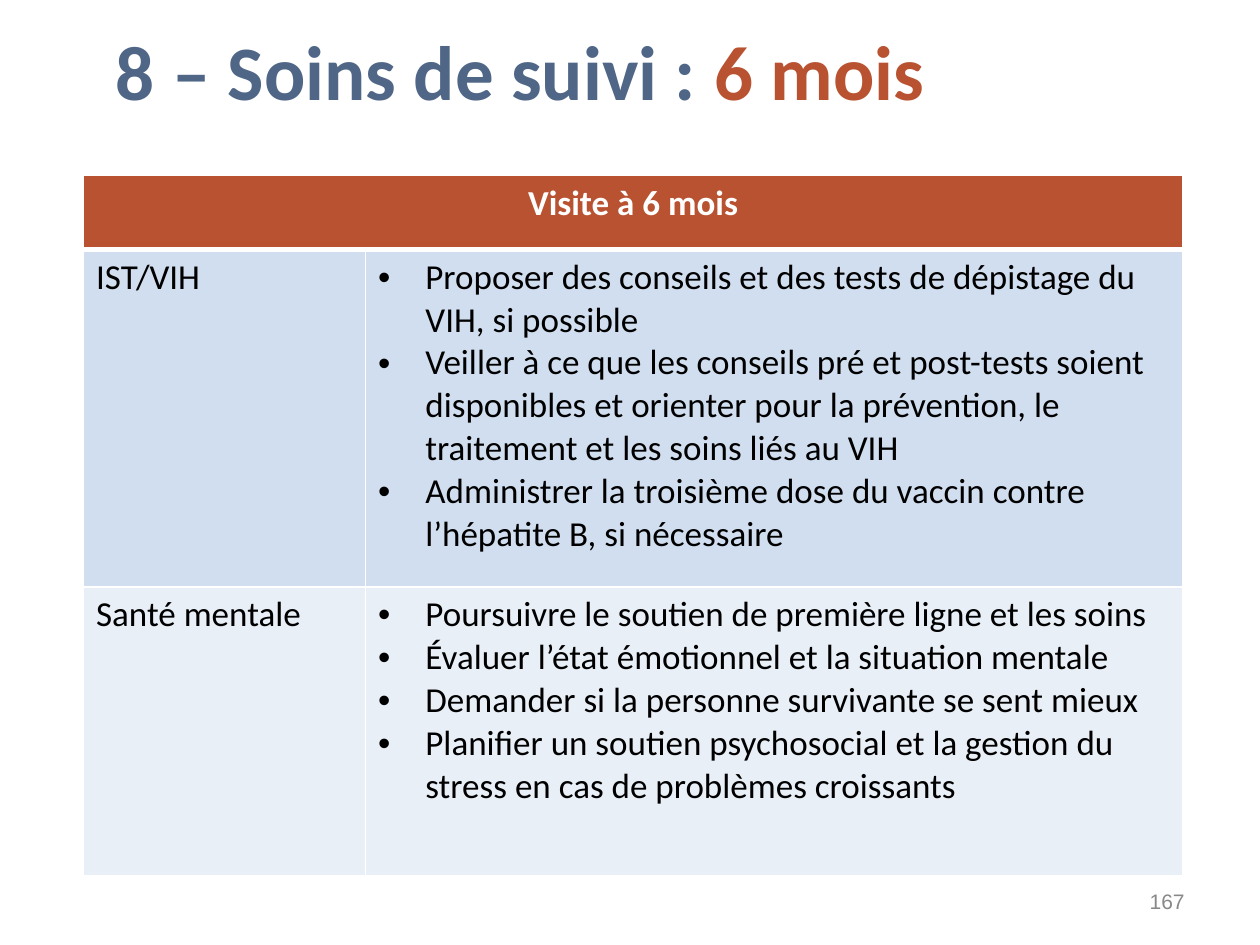
from lxml import etree
from pptx import Presentation
from pptx.dml.color import RGBColor
from pptx.enum.text import MSO_ANCHOR, PP_ALIGN
from pptx.oxml.ns import qn
from pptx.util import Pt

LEFT, CENTER, RIGHT = PP_ALIGN.LEFT, PP_ALIGN.CENTER, PP_ALIGN.RIGHT
MIDDLE = MSO_ANCHOR.MIDDLE
TITLE_ONLY = 5

COLORS = {
    "slate": "506687",
    "rust": "B85231",
    "white": "FFFFFF",
    "black": "000000",
    "grey": "888888",
    "band_dark": "D0DEEF",
    "band_light": "E9EFF7",
}

HEADER = "Visite à 6 mois"
CARE = [
    ("IST/VIH", [
        "Proposer des conseils et des tests de dépistage du VIH, si possible",
        "Veiller à ce que les conseils pré et post-tests soient disponibles et "
        "orienter pour la prévention, le traitement et les soins liés au VIH",
        "Administrer la troisième dose du vaccin contre l’hépatite B, si nécessaire",
    ]),
    ("Santé mentale", [
        "Poursuivre le soutien de première ligne et les soins",
        "Évaluer l’état émotionnel et la situation mentale",
        "Demander si la personne survivante se sent mieux",
        "Planifier un soutien psychosocial et la gestion du stress en cas de "
        "problèmes croissants",
    ]),
]


class SlideBuilder:
    """Holds the style and the current slide."""

    font = "Calibri"
    body_size = 20
    bullet_indent = 27

    def __init__(self, slide):
        self.slide = slide

    def style(self, run, size, color, bold=False, font=None):
        run.font.name = font or self.font
        run.font.size = Pt(size)
        run.font.bold = bold
        run.font.color.rgb = RGBColor.from_string(COLORS[color])

    def place(self, shape, left, top, width, height):
        shape.left, shape.top = Pt(left), Pt(top)
        shape.width, shape.height = Pt(width), Pt(height)

    def title(self, parts, box):
        title = self.slide.shapes.title
        self.place(title, *box)
        title.text_frame.vertical_anchor = MIDDLE
        paragraph = title.text_frame.paragraphs[0]
        paragraph.alignment = LEFT
        paragraph.line_spacing = 0.9
        for text, color in parts:
            run = paragraph.add_run()
            run.text = text
            self.style(run, 44, color, bold=True)

    def page_number(self, number, box):
        page = self.slide.shapes.add_textbox(*map(Pt, box)).text_frame
        page.word_wrap = True
        page.vertical_anchor = MIDDLE
        page.text = number
        page.paragraphs[0].alignment = RIGHT
        self.style(page.paragraphs[0].runs[0], 12, "grey", font="Arial")

    def bullet(self, paragraph):
        properties = paragraph._p.get_or_add_pPr()
        properties.set("marL", str(Pt(self.bullet_indent)))
        properties.set("indent", str(-Pt(self.bullet_indent)))
        color = etree.SubElement(properties, qn("a:buClr"))
        etree.SubElement(color, qn("a:srgbClr"), val=COLORS["black"])
        etree.SubElement(properties, qn("a:buFont"), typeface="Arial")
        etree.SubElement(properties, qn("a:buChar"), char="•")

    def borders(self, cell, top=1, bottom=1):
        properties = cell._tc.get_or_add_tcPr()
        for side, width in (("L", 1), ("R", 1), ("T", top), ("B", bottom)):
            line = etree.SubElement(properties, qn(f"a:ln{side}"), w=str(Pt(width)))
            fill = etree.SubElement(line, qn("a:solidFill"))
            etree.SubElement(fill, qn("a:srgbClr"), val=COLORS["white"])

    def cell(self, cell, lines, fill, color="black", bold=False, align=LEFT,
             bulleted=False):
        cell.fill.solid()
        cell.fill.fore_color.rgb = RGBColor.from_string(COLORS[fill])
        cell.text_frame.text = "\n".join(lines)
        for paragraph in cell.text_frame.paragraphs:
            if bulleted:
                self.bullet(paragraph)
            paragraph.alignment = align
            self.style(paragraph.runs[0], self.body_size, color, bold)

    def care_table(self, header, care, left, top, widths, heights):
        table = self.slide.shapes.add_table(
            len(heights), len(widths), Pt(left), Pt(top),
            Pt(sum(widths)), Pt(sum(heights))).table
        for column, width in zip(table.columns, widths):
            column.width = Pt(width)
        for index, (row, height) in enumerate(zip(table.rows, heights)):
            row.height = Pt(height)
            for cell in row.cells:
                # A thick rule separates the header from the first row
                self.borders(cell, top=3 if index == 1 else 1,
                             bottom=3 if index == 0 else 1)

        # Header across both columns
        table.cell(0, 0).merge(table.cell(0, 1))
        self.cell(table.cell(0, 0), [header], "rust", "white", True, CENTER)

        # One banded row per field of care
        for index, (field, actions) in enumerate(care, start=1):
            band = "band_dark" if index % 2 else "band_light"
            self.cell(table.cell(index, 0), [field], band)
            self.cell(table.cell(index, 1), actions, band, bulleted=True)


def main():
    presentation = Presentation()
    presentation.slide_width, presentation.slide_height = Pt(720), Pt(540)
    layout = presentation.slide_layouts[TITLE_ONLY]
    builder = SlideBuilder(presentation.slides.add_slide(layout))

    builder.care_table(HEADER, CARE, 47.7, 100.4,
                       widths=(161.2, 467), heights=(42.2, 192.8, 165))
    builder.page_number("167", (516, 500.5, 168, 28.75))
    builder.title([("8 – Soins de suivi : ", "slate"), ("6 mois", "rust")],
                  (59, 10, 515, 66))

    presentation.save("out.pptx")


if __name__ == "__main__":
    main()
